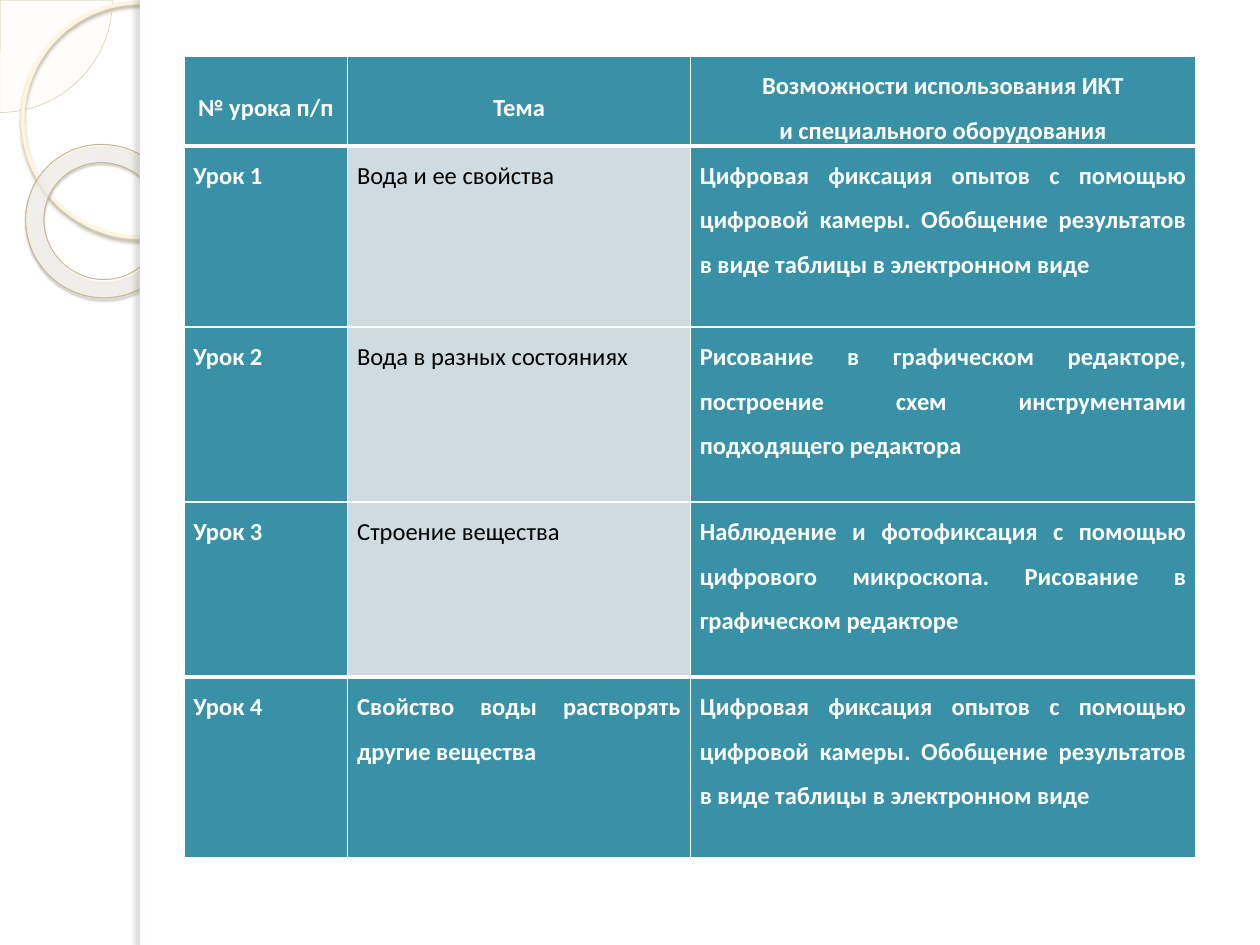
import dataclasses

import pptx
import pptx.dml.color
import pptx.enum.shapes
import pptx.enum.text
import pptx.oxml
import pptx.oxml.ns
import pptx.util

Pt = pptx.util.Pt
Shape = pptx.enum.shapes.MSO_SHAPE
Align = pptx.enum.text.PP_ALIGN
Anchor = pptx.enum.text.MSO_ANCHOR
NS = pptx.oxml.ns.nsdecls("a")


@dataclasses.dataclass(frozen=True)
class Theme:
    font: str = "Calibri"
    size: float = 14
    spacing: float = 1.5
    white: str = "FFFFFF"
    black: str = "000000"
    teal: str = "3891A7"
    pale: str = "CEDCE1"
    cream: str = "FEFAF4"
    cream_line: str = "D3C39F"
    ring_line: str = "FFF5DE"
    ring_shadow: str = "B0A68F"
    donut_line: str = "C7B893"
    donut_shadow: str = "5A5444"
    donut_stops: tuple = ((0, "FFFCF6", 70), (70, "FFFEFB", 55), (100, "F0D28E", 60))
    panel_shadow: str = "736F63"


THEME = Theme()
HEADER = ("№ урока п/п", "Тема", "Возможности использования ИКТ\vи специального оборудования")
CAMERA = ("Цифровая фиксация опытов с помощью цифровой камеры. "
          "Обобщение результатов в виде таблицы в электронном виде")
LESSONS = (
    ("Вода и ее свойства", CAMERA),
    ("Вода в разных состояниях",
     "Рисование в графическом редакторе, построение схем инструментами подходящего редактора"),
    ("Строение вещества",
     "Наблюдение и фотофиксация с помощью цифрового микроскопа. Рисование в графическом редакторе"),
    ("Свойство воды растворять другие вещества", CAMERA),
)
COLUMN_WIDTHS = (93.6, 195.8, 288.8)
ROW_HEIGHTS = (51.5, 103.5, 100, 100, 103.5)


def rgb(code):
    return pptx.dml.color.RGBColor.from_string(code)


def color_xml(code, alpha):
    return f'<a:srgbClr val="{code}"><a:alpha val="{alpha * 1000}"/></a:srgbClr>'


def add_plain(slide, kind, box, fill=None, line=None):
    """Add a preset shape; line is a (colour, width) pair."""
    shape = slide.shapes.add_shape(kind, *map(Pt, box))
    shape.shadow.inherit = False
    if fill:
        shape.fill.solid()
        shape.fill.fore_color.rgb = rgb(fill)
    else:
        shape.fill.background()
    if line:
        shape.line.color.rgb = rgb(line[0])
        shape.line.width = Pt(line[1])
    else:
        shape.line.fill.background()
    return shape


def cast_shadow(shape, color, alpha, blur, distance, angle):
    effects = shape._element.spPr.find(pptx.oxml.ns.qn("a:effectLst"))
    effects.append(pptx.oxml.parse_xml(
        f'<a:outerShdw {NS} blurRad="{Pt(blur)}" dist="{Pt(distance)}" dir="{angle * 60000}" '
        f'algn="tl" rotWithShape="0">{color_xml(color, alpha)}</a:outerShdw>'))


def fill_radial(shape, stops):
    stops_xml = "".join(f'<a:gs pos="{pos * 1000}">{color_xml(color, alpha)}</a:gs>'
                        for pos, color, alpha in stops)
    gradient = pptx.oxml.parse_xml(
        f'<a:gradFill {NS} rotWithShape="1"><a:gsLst>{stops_xml}</a:gsLst><a:path path="circle">'
        '<a:fillToRect l="-408000" t="-50000" r="508000" b="150000"/></a:path></a:gradFill>')
    properties = shape._element.spPr
    properties.replace(properties.find(pptx.oxml.ns.qn("a:noFill")), gradient)


def add_side_ornament(slide, box):
    """Rings in the left strip, cut off by the white page panel to its right."""
    left, top, width, height = box

    corner = add_plain(slide, Shape.PIE, (left - 64.2, top - 64.2, 128.5, 128.5),
                       THEME.cream, (THEME.cream_line, 0.25))
    corner.adjustments[0] = 0
    corner.adjustments[1] = 54.02
    corner_color = corner._element.spPr.find(pptx.oxml.ns.qn("a:solidFill"))[0]
    corner_color.append(pptx.oxml.parse_xml(f'<a:alpha {NS} val="33000"/>'))

    ring = add_plain(slide, Shape.OVAL, (left + 13, top + 1.5, 134, 134),
                     line=(THEME.ring_line, 2.15))
    cast_shadow(ring, THEME.ring_shadow, 85, 2, 2, 90)

    donut = add_plain(slide, Shape.DONUT, (left + 14.4, top + 82.8, 88.6, 87.1),
                      line=(THEME.donut_line, 0.58))
    donut.adjustments[0] = 0.12
    donut.rotation = 38.6
    fill_radial(donut, THEME.donut_stops)
    cast_shadow(donut, THEME.donut_shadow, 35, 1, 1.2, 75)

    panel_left = left + 80
    add_plain(slide, Shape.RECTANGLE, (panel_left, top, width - 80, height), THEME.white)
    edge = add_plain(slide, Shape.RECTANGLE, (panel_left, top, 5.8, height), THEME.white)
    cast_shadow(edge, THEME.panel_shadow, 25, 3, 3, 180)


def set_borders(cell, widths):
    properties = cell._tc.get_or_add_tcPr()
    for side, width in widths.items():
        properties.append(pptx.oxml.parse_xml(
            f'<a:ln{side} {NS} w="{Pt(width)}"><a:solidFill>'
            f'<a:srgbClr val="{THEME.white}"/></a:solidFill></a:ln{side}>'))


def write_cell(cell, text, align, anchor, fill, color, bold):
    margins = {"margin_left": Pt(5.4), "margin_right": Pt(5.4), "margin_top": 0, "margin_bottom": 0}
    for name, value in margins.items():
        setattr(cell, name, value)
    cell.vertical_anchor = anchor
    cell.fill.solid()
    cell.fill.fore_color.rgb = rgb(fill)
    cell.text = text
    paragraph = cell.text_frame.paragraphs[0]
    paragraph.alignment = align
    paragraph.line_spacing = THEME.spacing
    for run in paragraph.runs:
        for name, value in {"name": THEME.font, "size": Pt(THEME.size), "bold": bold}.items():
            setattr(run.font, name, value)
        run.font.color.rgb = rgb(color)


def add_lesson_table(slide, box):
    rows = [HEADER] + [(f"Урок {number}", *lesson) for number, lesson in enumerate(LESSONS, 1)]
    last = len(rows) - 1
    table = slide.shapes.add_table(len(rows), len(HEADER), *map(Pt, box)).table
    table.first_row = table.horz_banding = False
    for column, width in zip(table.columns, COLUMN_WIDTHS):
        column.width = Pt(width)
    for row, height in zip(table.rows, ROW_HEIGHTS):
        row.height = Pt(height)

    for r, texts in enumerate(rows):
        heading = r == 0
        borders = {"L": 1, "R": 1, "T": 3 if r in (1, last) else 1,
                   "B": 3 if r in (0, last - 1) else 1}
        for c, text in enumerate(texts):
            light = c == 1 and 0 < r < last
            cell = table.cell(r, c)
            set_borders(cell, borders)
            write_cell(cell, text,
                       Align.CENTER if heading else Align.JUSTIFY,
                       Anchor.MIDDLE if heading else Anchor.TOP,
                       THEME.pale if light else THEME.teal,
                       THEME.black if light else THEME.white,
                       not light)


def main():
    deck = pptx.Presentation()
    deck.slide_width, deck.slide_height = Pt(720), Pt(540)
    slide = deck.slides.add_slide(deck.slide_layouts[6])
    add_side_ornament(slide, (0, 0, 720, 540))
    add_lesson_table(slide, (105.1, 32, sum(COLUMN_WIDTHS), sum(ROW_HEIGHTS)))
    deck.save("out.pptx")


if __name__ == "__main__":
    main()
